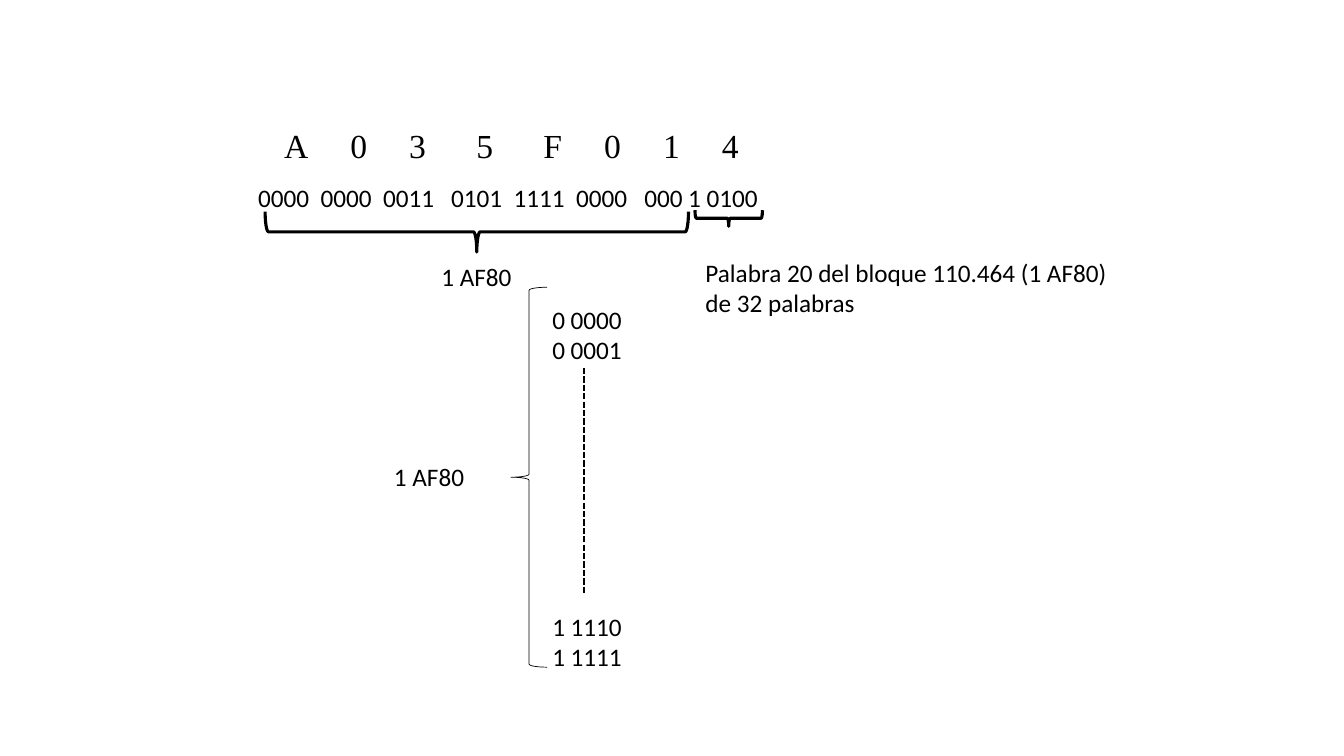
from lxml import etree
from pptx import Presentation
from pptx.dml.color import RGBColor
from pptx.enum.dml import MSO_LINE
from pptx.enum.shapes import MSO_CONNECTOR, MSO_SHAPE
from pptx.enum.text import MSO_AUTO_SIZE
from pptx.oxml.ns import qn
from pptx.util import Pt

LEFT_BRACE = MSO_SHAPE.LEFT_BRACE
STRAIGHT = MSO_CONNECTOR.STRAIGHT
GROW = MSO_AUTO_SIZE.SHAPE_TO_FIT_TEXT
DASH = MSO_LINE.SQUARE_DOT

THEME = {
    "ink": RGBColor(0, 0, 0),
    "body": ("Calibri", 18),
    "hex": ("Times New Roman", 24),
}


def add_text(lines, left, top, width, height, style="body", wrap=True):
    frame = slide.shapes.add_textbox(Pt(left), Pt(top), Pt(width), Pt(height)).text_frame
    frame.text = "\n".join(lines)
    frame.word_wrap = wrap
    frame.auto_size = GROW
    face, size = THEME[style]
    for paragraph in frame.paragraphs:
        for run in paragraph.runs:
            run.font.name = face
            run.font.size = Pt(size)
            run.font.color.rgb = THEME["ink"]
    return frame


def add_tab_row(groups, stops, left, top, width, height, style):
    frame = add_text(["\t".join(groups)], left, top, width, height, style)
    tabs = etree.SubElement(frame.paragraphs[0]._p.get_or_add_pPr(), qn("a:tabLst"))
    for stop in stops:
        etree.SubElement(tabs, qn("a:tab"), pos=str(int(Pt(stop))), algn="l")


deck = Presentation()
deck.slide_width = Pt(960)
deck.slide_height = Pt(540)
slide = deck.slides.add_slide(deck.slide_layouts[6])

add_tab_row("A035F014", [47.3, 89.3, 137.3, 185.3, 228.7, 270.7, 312.7],
            195.8, 85.7, 480, 36, "hex")
add_tab_row(["0000", "0000", "0011", "0101", "1111", "0000", "000 1 0100"],
            [44.6, 89.2, 137.9, 182.5, 227.1, 275.8],
            177.3, 126.7, 375, 29, "body")

for left, top, width, height, rotation, weight in [
    (514.8, 131.8, 11.5, 48.2, 270, 2.25),
    (326.2, 14.4, 28.8, 302.4, 270, 2.25),
    (365, 205.2, 25.9, 271.4, 0, 0.5),
]:
    brace = slide.shapes.add_shape(LEFT_BRACE, Pt(left), Pt(top), Pt(width), Pt(height))
    brace.rotation = rotation
    brace.shadow.inherit = False
    brace.fill.background()
    brace.line.color.rgb = THEME["ink"]
    brace.line.width = Pt(weight)

add_text(["Palabra 20 del bloque 110.464 (1 AF80)", "de 32 palabras"], 496.8, 180, 339, 51)
for left, top in [(308.2, 182.9), (274.3, 326.2)]:
    add_text(["1 AF80"], left, top, 65, 29, wrap=False)

word_addresses = add_text(["0 0000", "0 0001", "1 1110", "1 1111"], 387.4, 213.8, 88.6, 269.3)
word_addresses.paragraphs[2].space_before = Pt(175.8)

omitted_words = slide.shapes.add_connector(STRAIGHT, Pt(416.9), Pt(262.8), Pt(416.9), Pt(423.4))
omitted_words.line.color.rgb = THEME["ink"]
omitted_words.line.width = Pt(1.5)
omitted_words.line.dash_style = DASH
etree.SubElement(omitted_words._element.spPr, qn("a:effectLst"))

deck.save("out.pptx")
